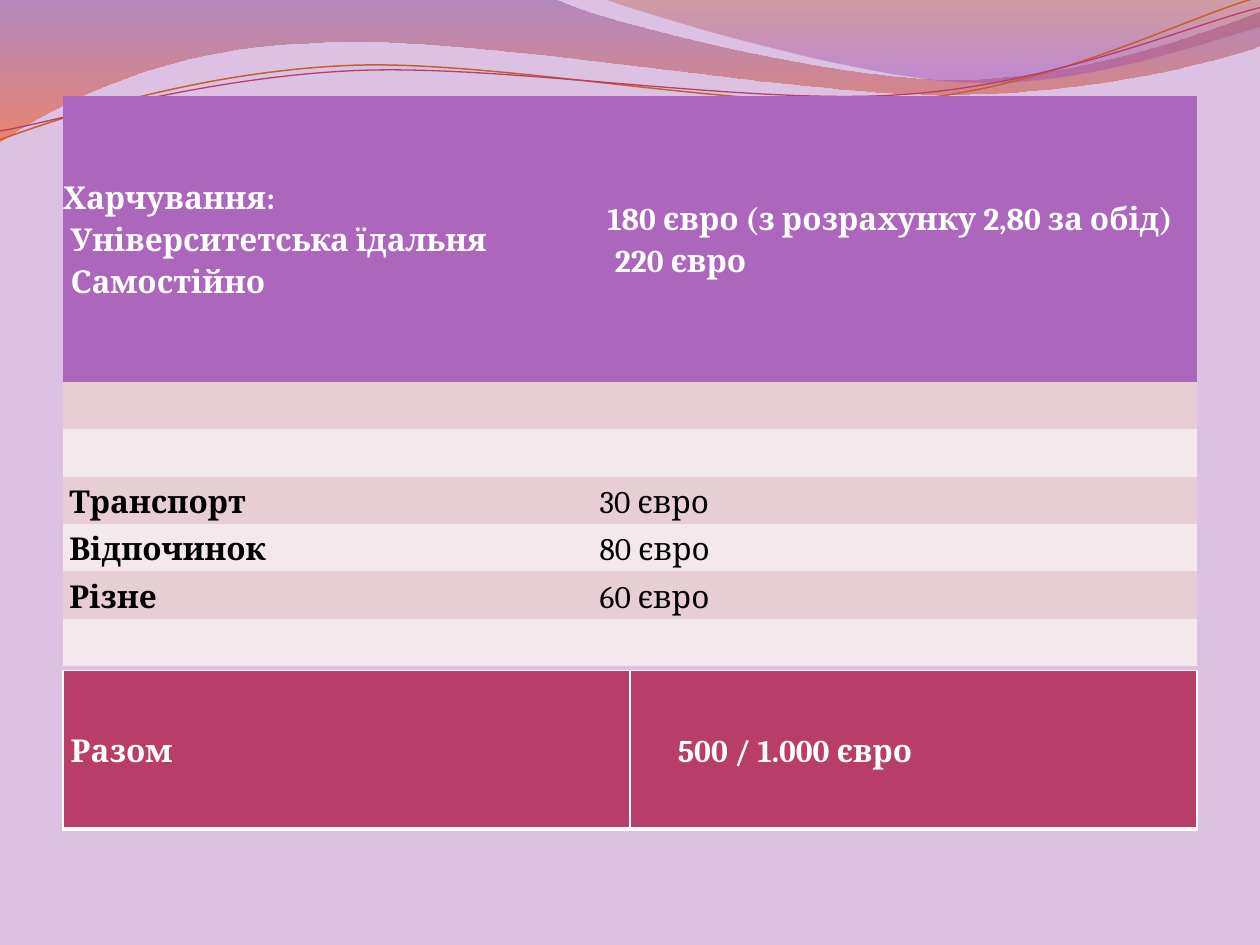
import lxml.etree
import pptx
import pptx.dml.color
import pptx.enum.text
import pptx.oxml.ns
import pptx.util

Inches = pptx.util.Inches
qn = pptx.oxml.ns.qn
FONT = "Cambria"
NO_STYLE = "{2D5ABB26-0587-4C30-8999-92F81FD0307C}"
PURPLE, CRIMSON, WHITE, BLACK = "AC66BB", "B83D68", "FFFFFF", "000000"
BANDS = ["E6CED4", "F3E8EB"]


def rgb(value):
    return pptx.dml.color.RGBColor.from_string(value)


def add_text(p, text, size=18, color=BLACK, bold=False, indent=0):
    p.line_spacing = 1.15
    p._p.get_or_add_pPr().set("marL", str(Inches(indent)))
    r = p.add_run()
    r.text = text
    r.font.name = FONT
    r.font.size = pptx.util.Pt(size)
    r.font.bold = bold
    r.font.color.rgb = rgb(color)


def add_curve(s, left, top, start, segments, closed):
    pairs = [start] + [seg[i:i + 2] for seg in segments for i in range(0, len(seg), 2)]
    points = [(Inches(left + x), Inches(top + y)) for x, y in pairs]
    builder = s.shapes.build_freeform(*points[0], scale=1.0)
    builder.add_line_segments(points[1:], close=closed)
    sp = builder.convert_to_shape()
    sp.shadow.inherit = False
    lines = iter(list(sp._element.iter(qn("a:lnTo"))))
    for seg in segments:
        line = next(lines)
        if len(seg) == 6:
            line_group = [line, next(lines), next(lines)]
            bezier = lxml.etree.Element(qn("a:cubicBezTo"))
            line.addprevious(bezier)
            for part in line_group:
                bezier.append(part[0])
                part.getparent().remove(part)
    return sp


def add_wave(s, left, top, start, segments, stops):
    sp = add_curve(s, left, top, start, segments, True)
    sp.line.fill.background()
    sp.fill.gradient()
    sp.fill.gradient_angle = 270
    for stop, (position, color, _) in zip(sp.fill.gradient_stops, stops):
        stop.position = position
        stop.color.rgb = rgb(color)
    for gs, (_, _, alpha) in zip(sp._element.iter(qn("a:gs")), stops):
        lxml.etree.SubElement(gs[0], qn("a:alpha"), val=str(alpha * 1000))


def add_strand(s, left, top, start, segments, color, width):
    sp = add_curve(s, left, top, start, segments, False)
    sp.fill.background()
    sp.line.color.rgb = rgb(color)
    sp.line.width = pptx.util.Pt(width)


def add_waves(s, left, top):
    add_wave(s, left, top, (0, 0),
             [(4.4, -0.01), (4.76, 0.17, 6.64, 0.63, 7.58, 0.63),
              (8.53, 0.63, 9.58, 0.26, 10, 0.09), (10.01, 0.36),
              (9.83, 0.44, 8.7, 0.76, 7.46, 0.75),
              (6.22, 0.75, 3.82, 0.28, 2.57, 0.34),
              (1.29, 0.36, 0.46, 0.83, -0.01, 1.13), (0, 0)],
             [(0, "834591", 45), (1, "F35307", 55)])
    add_wave(s, left, top, (4.79, -0.01),
             [(5.09, 0.11, 6.82, 0.62, 7.69, 0.65),
              (8.56, 0.69, 9.61, 0.32, 10, 0.21), (10, 0), (4.79, -0.01)],
             [(0, "B74915", 30), (0.8, "A14BB4", 45)])
    add_strand(s, left, top, (0, 1.11),
               [(0.48, 0.93, 1.58, 0.57, 2.77, 0.52),
                (3.95, 0.47, 5.93, 0.89, 7.13, 0.8),
                (8.33, 0.71, 9.38, 0.15, 9.98, -0.02)], "C45F30", 0.85)
    add_strand(s, left, top, (0, 1.04),
               [(0.47, 0.96, 1.64, 0.61, 2.83, 0.56),
                (4.03, 0.51, 5.97, 0.84, 7.17, 0.75),
                (8.36, 0.67, 9.41, 0.21, 10, 0.06)], CRIMSON, 0.75)


def add_grid(s, left, top, widths, heights, fills):
    frame = s.shapes.add_table(len(heights), len(widths), Inches(left), Inches(top),
                               Inches(sum(widths)), Inches(sum(heights)))
    table = frame.table
    table.first_row = table.horz_banding = False
    next(table._tbl.iter(qn("a:tableStyleId"))).text = NO_STYLE
    for column, width in zip(table.columns, widths):
        column.width = Inches(width)
    for row, height, fill in zip(table.rows, heights, fills):
        row.height = Inches(height)
        for cell in row.cells:
            cell.fill.solid()
            cell.fill.fore_color.rgb = rgb(fill)
            cell.margin_left = cell.margin_right = 0
            cell.margin_top = cell.margin_bottom = 0
            cell.vertical_anchor = pptx.enum.text.MSO_ANCHOR.MIDDLE
    return table


def fill_cell(cell, lines, **fmt):
    tf = cell.text_frame
    for i, (text, indent) in enumerate(lines):
        p = tf.add_paragraph() if i else tf.paragraphs[0]
        add_text(p, text, indent=indent, **fmt)


def add_borders(cell, color, widths):
    tcPr = cell._tc.get_or_add_tcPr()
    for i, (side, width) in enumerate(widths.items()):
        ln = lxml.etree.Element(qn("a:ln" + side), w=str(pptx.util.Pt(width)))
        fill = lxml.etree.SubElement(ln, qn("a:solidFill"))
        lxml.etree.SubElement(fill, qn("a:srgbClr"), val=color)
        tcPr.insert(i, ln)


def add_expenses(s, left, top, width, height):
    price_width, head_height = 2.37, 2.27
    widths = [width - 2 * price_width, price_width, price_width]
    heights = [head_height] + [(height - head_height) / 6] * 6
    table = add_grid(s, left, top, widths, heights, [PURPLE] + BANDS * 3)
    for row in range(6):
        table.cell(row, 1).merge(table.cell(row, 2))
    fill_cell(table.cell(0, 0),
              [("Харчування:", 0), ("Університетська їдальня", 0.06), ("Самостійно", 0.06)],
              color=WHITE, bold=True)
    fill_cell(table.cell(0, 1),
              [("180 євро (з розрахунку 2,80 за обід)", 0.06), ("220 євро", 0.12)],
              color=WHITE, bold=True)
    items = [("Транспорт", "30 євро"), ("Відпочинок", "80 євро"), ("Різне", "60 євро")]
    for row, (name, price) in enumerate(items, 3):
        fill_cell(table.cell(row, 0), [(name, 0.05)], bold=True)
        fill_cell(table.cell(row, 1), [(price, 0)])


def add_total(s, left, top, width, height):
    table = add_grid(s, left, top, [width / 2] * 2, [height], [CRIMSON])
    for col, line in enumerate([("Разом", 0.06), ("500 / 1.000 євро", 0.38)]):
        cell = table.cell(0, col)
        fill_cell(cell, [line], color=WHITE, bold=True)
        add_borders(cell, WHITE, {"L": 1, "R": 1, "T": 1, "B": 3})


def main():
    prs = pptx.Presentation()
    prs.slide_width, prs.slide_height = Inches(10), Inches(7.5)
    s = prs.slides.add_slide(prs.slide_layouts[6])
    s.background.fill.solid()
    s.background.fill.fore_color.rgb = rgb("DDC1E3")
    add_waves(s, 0, 0)
    add_expenses(s, 0.5, 0.76, 9, 4.53)
    add_total(s, 0.5, 5.32, 9, 1.26)
    prs.save("out.pptx")


if __name__ == "__main__":
    main()
